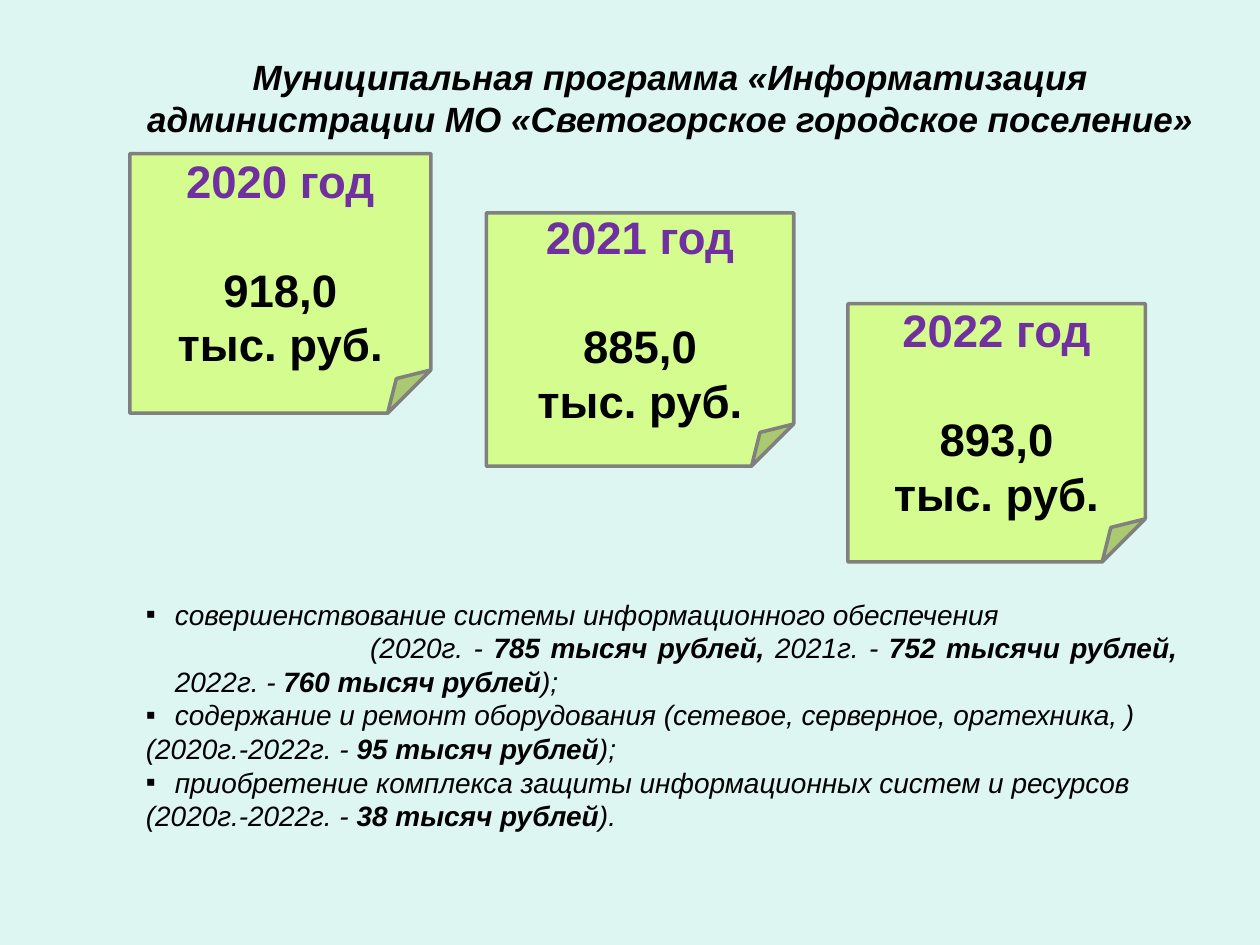
from lxml.etree import SubElement
from pptx import Presentation
from pptx.dml.color import RGBColor
from pptx.enum.shapes import MSO_SHAPE
from pptx.enum.text import MSO_ANCHOR, PP_ALIGN
from pptx.oxml.ns import qn
from pptx.util import Inches, Pt

TITLE = "Муниципальная программа «Информатизация администрации МО «Светогорское городское поселение»"
NOTES = [
    ("2020 год", "918,0", (1.03, 1.22, 2.39, 2.06)),
    ("2021 год", "885,0", (3.86, 1.69, 2.44, 2.01)),
    ("2022 год", "893,0", (6.73, 2.41, 2.36, 2.05)),
]
HANG = 0.23
BULLET, PLAIN, INSET = (HANG, -HANG), (0, 0), (HANG, 1.55)
MEASURES = [
    (BULLET, ["совершенствование системы информационного обеспечения"]),
    (INSET, ["(2020г. - ", "785 тысяч рублей, ", "2021г. - ", "752 тысячи рублей, ",
             "2022г. - ", "760 тысяч рублей", ");"]),
    (BULLET, ["содержание и ремонт оборудования (сетевое, серверное, оргтехника, )"]),
    (PLAIN, ["(2020г.-2022г. - ", "95 тысяч рублей", ");"]),
    (BULLET, ["приобретение комплекса защиты информационных систем и ресурсов"]),
    (PLAIN, ["(2020г.-2022г. - ", "38 тысяч рублей", ")."]),
]


def color(value):
    """Turn a hex string into a colour."""
    return RGBColor.from_string(value)


def add_span(para, text, hue="000000", **formats):
    """Add a formatted run to a paragraph."""
    span = para.add_run()
    span.text = text
    span.font.color.rgb = color(hue)
    for name, value in {"name": "Arial", **formats}.items():
        setattr(span.font, name, value)


def next_para(frame, index, alignment):
    """Return the first paragraph of a frame, or a new one."""
    para = frame.add_paragraph() if index else frame.paragraphs[0]
    para.alignment = alignment
    return para


def add_title(page, bounds):
    """Place the slide title."""
    frame = page.shapes.add_textbox(*map(Inches, bounds)).text_frame
    frame.word_wrap = True
    frame.vertical_anchor = MSO_ANCHOR.MIDDLE
    para = next_para(frame, 0, PP_ALIGN.CENTER)
    add_span(para, TITLE, size=Pt(20), bold=True, italic=True)


def add_note(page, bounds, year, amount):
    """Place a folded note with a year and its amount."""
    note = page.shapes.add_shape(MSO_SHAPE.FOLDED_CORNER, *map(Inches, bounds))
    note.shadow.inherit = False
    note.fill.solid()
    note.fill.fore_color.rgb = color("D5FC8E")
    note.line.color.rgb = color("808080")
    note.line.width = Pt(2)
    frame = note.text_frame
    frame.word_wrap = True
    frame.vertical_anchor = MSO_ANCHOR.MIDDLE
    lines = [(year, "7030A0", 0), (amount, "000000", 31), ("тыс. руб.", "000000", 0)]
    for index, (text, hue, gap) in enumerate(lines):
        para = next_para(frame, index, PP_ALIGN.CENTER)
        para.space_before = Pt(gap)
        add_span(para, text, hue, size=Pt(26), bold=True)


def add_measures(page, bounds):
    """Place the list of measures, every second run in bold."""
    frame = page.shapes.add_textbox(*map(Inches, bounds)).text_frame
    frame.word_wrap = True
    for index, (indents, texts) in enumerate(MEASURES):
        para = next_para(frame, index, PP_ALIGN.JUSTIFY)
        properties = para._p.get_or_add_pPr()
        for name, value in zip(("marL", "indent"), indents):
            properties.set(name, str(Inches(value)))
        if indents == BULLET:
            SubElement(properties, qn("a:buFont"), typeface="Arial")
            SubElement(properties, qn("a:buChar"), char="▪")
        for order, text in enumerate(texts):
            add_span(para, text, size=Pt(16), bold=order % 2 == 1, italic=True)


def main():
    """Build the deck and save it."""
    deck = Presentation()
    deck.slide_width, deck.slide_height = Inches(10), Inches(7.5)
    page = deck.slides.add_slide(deck.slide_layouts[6])
    page.background.fill.solid()
    page.background.fill.fore_color.rgb = color("DEF6F1")
    add_title(page, (1.06, 0.36, 8.52, 0.83))
    add_measures(page, (1.06, 4.69, 8.38, 2.22))
    for year, amount, bounds in NOTES:
        add_note(page, bounds, year, amount)
    deck.save("out.pptx")


if __name__ == "__main__":
    main()
